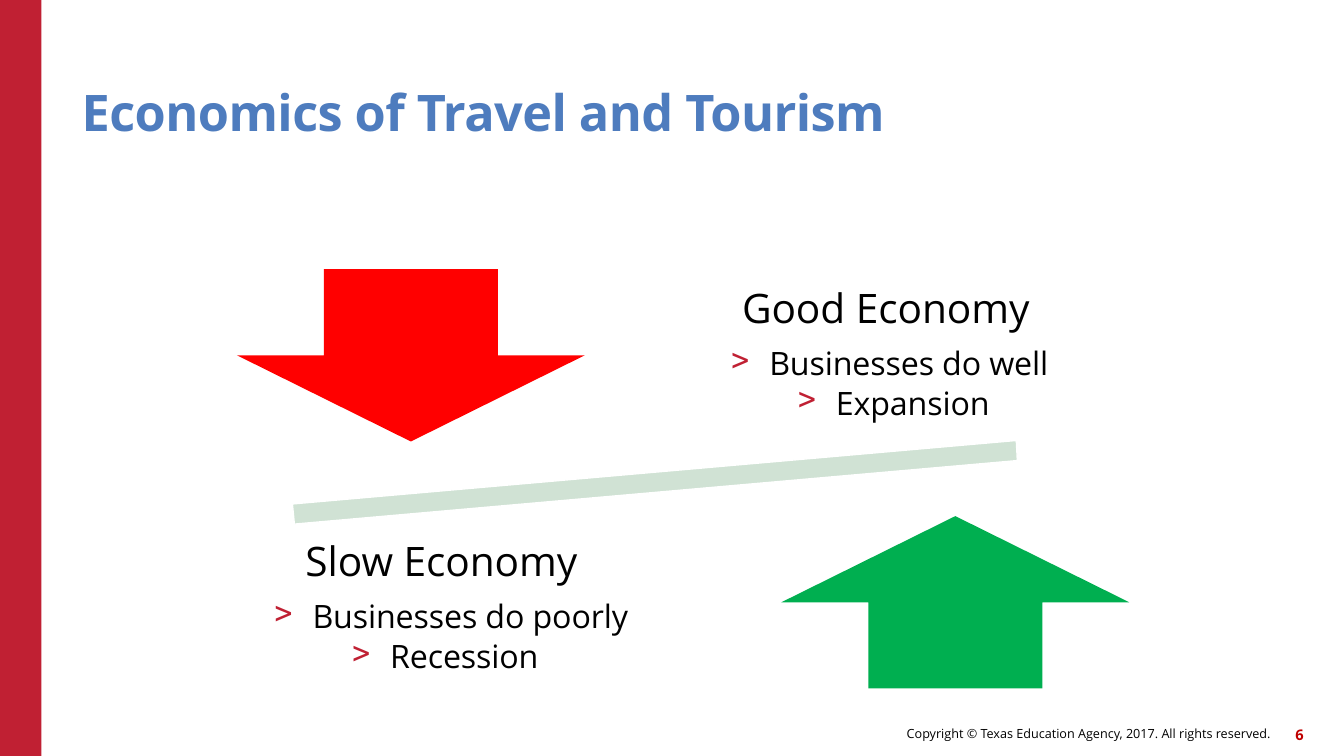
from lxml.etree import SubElement
from pptx import Presentation
from pptx.dml.color import RGBColor
from pptx.enum.shapes import MSO_SHAPE
from pptx.enum.text import MSO_ANCHOR, PP_ALIGN
from pptx.oxml.ns import qn
from pptx.util import Inches, Pt

CRIMSON = RGBColor(0xC0, 0x20, 0x33)
MAROON = RGBColor(0xC0, 0x00, 0x00)
BLUE = RGBColor(0x4E, 0x7C, 0xBE)
BLACK = RGBColor(0x00, 0x00, 0x00)
WHITE = RGBColor(0xFF, 0xFF, 0xFF)
SAGE = RGBColor(0xD0, 0xE2, 0xD4)
GREEN = RGBColor(0x00, 0xAF, 0x50)
RED = RGBColor(0xFF, 0x00, 0x00)

deck = Presentation()
deck.slide_width, deck.slide_height = Inches(13.33), Inches(7.5)
slide = deck.slides.add_slide(deck.slide_layouts[6])
shapes = slide.shapes


def add_text(text, para, size, color=BLACK, bold=False, align=PP_ALIGN.LEFT,
             before=0, left=0, bullet=False, spacing=0):
    props = para._p.get_or_add_pPr()
    props.set("marL", str(Inches(left)))
    props.set("indent", str(Inches(-0.38 if bullet else 0)))
    para.alignment = align
    para.space_before = Pt(before)
    if bullet:
        tint = SubElement(props, qn("a:buClr"))
        SubElement(tint, qn("a:srgbClr")).set("val", str(CRIMSON))
        SubElement(props, qn("a:buChar")).set("char", ">")
    run = para.add_run()
    run.text = text
    run.font.name, run.font.size = "Open Sans", Pt(size)
    run.font.bold, run.font.color.rgb = bold, color
    if spacing:
        run._r.get_or_add_rPr().set("spc", str(spacing))


def add_frame(left, top, width, height, anchor=MSO_ANCHOR.TOP):
    box = shapes.add_textbox(Inches(left), Inches(top), Inches(width), Inches(height))
    frame = box.text_frame
    frame.word_wrap = True
    frame.vertical_anchor = anchor
    frame.margin_left = frame.margin_right = 0
    frame.margin_top = frame.margin_bottom = 0
    return frame


solids = [
    (MSO_SHAPE.RECTANGLE, 0, 0, 0.41, 7.5, CRIMSON),
    (MSO_SHAPE.DOWN_ARROW, 2.35, 2.67, 3.45, 1.71, RED),
    (MSO_SHAPE.UP_ARROW, 7.75, 5.12, 3.45, 1.71, GREEN),
]
for kind, left, top, width, height, color in solids:
    solid = shapes.add_shape(kind, Inches(left), Inches(top), Inches(width), Inches(height))
    solid.shadow.inherit = False
    solid.fill.solid()
    solid.fill.fore_color.rgb = color
    solid.line.fill.background()

corners = [(Inches(x), Inches(y)) for x, y in
           [(2.9, 5), (10.08, 4.37), (10.09, 4.57), (2.92, 5.2)]]
path = shapes.build_freeform(*corners[0])
path.add_line_segments(corners[1:], close=True)
beam = path.convert_to_shape()
beam.shadow.inherit = False
beam.fill.solid()
beam.fill.fore_color.rgb = SAGE
beam.line.color.rgb = WHITE
beam.line.width = Pt(1)

title = add_frame(0.81, 0.45, 11, 0.96, MSO_ANCHOR.BOTTOM).paragraphs[0]
title.line_spacing = 0.9
add_text("Economics of Travel and Tourism", title, 36, color=BLUE, bold=True, spacing=-40)

panels = [
    (7.25, 2.81, [("Good Economy", 0.11), ("Businesses do well", 0.38), ("Expansion", 1.04)]),
    (2.72, 5.32, [("Slow Economy", 0.31), ("Businesses do poorly", 0.38), ("Recession", 1.15)]),
]
for left, top, (head, *points) in panels:
    frame = add_frame(left, top, 4, 1.45)
    add_text(head[0], frame.paragraphs[0], 29, left=head[1], spacing=-5)
    for gap, (point, indent) in zip((8.4, 0.5), points):
        add_text(point, frame.add_paragraph(), 23, before=gap, left=indent,
                 bullet=True, spacing=-10)

notice = add_frame(6.14, 7.12, 6.46, 0.32, MSO_ANCHOR.MIDDLE).paragraphs[0]
add_text("Copyright © Texas Education Agency, 2017. All rights reserved.", notice, 9,
         align=PP_ALIGN.RIGHT)
number = add_frame(12.51, 7.13, 0.42, 0.32, MSO_ANCHOR.MIDDLE).paragraphs[0]
add_text("6", number, 10.5, color=MAROON, bold=True, align=PP_ALIGN.RIGHT)

deck.save("out.pptx")
